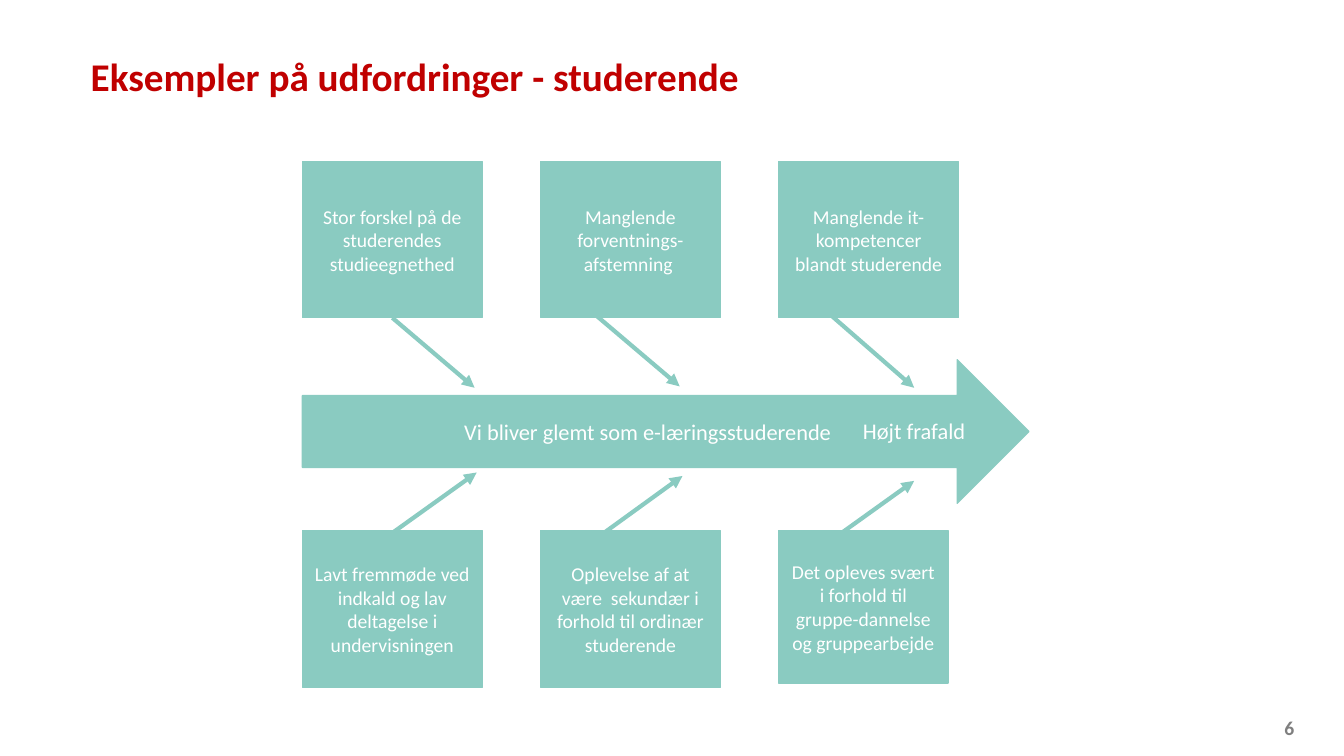
from pptx import Presentation
from pptx.dml.color import RGBColor
from pptx.enum.shapes import MSO_CONNECTOR as Conn, MSO_SHAPE as Shape
from pptx.enum.text import MSO_ANCHOR as Anchor, MSO_AUTO_SIZE as Auto, PP_ALIGN as Align
from pptx.oxml.ns import qn
from pptx.util import Pt
from lxml.etree import SubElement

# Content
TITLE = "Eksempler på udfordringer - studerende"
PAGE = "6"
# Each cause: text, box width, box height, arrow start, arrow end
UPPER = [
    ("Stor forskel på de studerendes studieegnethed", 128.5, 111.5,
     (279.5, 227), (339, 277)),
    ("Manglende forventnings-afstemning ", 128.5, 111.5,
     (422.5, 222.5), (485.5, 276)),
    ("Manglende it-kompetencer blandt studerende", 128.5, 111.5,
     (594.5, 226), (653, 277)),
]
LOWER = [
    ("Lavt fremmøde ved indkald og lav deltagelse i undervisningen", 128.5, 112,
     (277, 383), (340.5, 337.5)),
    ("Oplevelse af at være  sekundær i forhold til ordinær studerende", 128.5, 112,
     (424, 386), (487.5, 340)),
    ("Det opleves svært i forhold til gruppe-dannelse og gruppearbejde", 121, 109,
     (589.5, 389), (653, 343.5)),
]
ROWS = [(115.5, UPPER), (379, LOWER)]
SPINE = "Vi bliver glemt som e-læringsstuderende"
EFFECT = "Højt frafald"

# Style
FONT = "Calibri"
TEAL = RGBColor(0x8A, 0xCB, 0xC1)
RED = RGBColor(0xC0, 0x00, 0x00)
GREY = RGBColor(0x7F, 0x7F, 0x7F)
WHITE = RGBColor(0xFF, 0xFF, 0xFF)
LEFT, PITCH = 216, 170.1


def write(frame, text, size, color, align, anchor, inset=None, bold=False):
    frame.word_wrap = True
    frame.auto_size = Auto.NONE
    frame.vertical_anchor = anchor
    if inset is not None:
        frame.margin_left = frame.margin_right = Pt(inset)
        frame.margin_top = frame.margin_bottom = Pt(inset)
    frame.text = text
    para = frame.paragraphs[0]
    para.alignment = align
    font = para.font
    font.name, font.size, font.bold = FONT, Pt(size), bold
    font.color.rgb = color
    return para


def block(kind, x, y, w, h, text, size):
    shape = slide.shapes.add_shape(kind, Pt(x), Pt(y), Pt(w), Pt(h))
    shape.shadow.inherit = False
    shape.fill.solid()
    shape.fill.fore_color.rgb = TEAL
    shape.line.color.rgb = TEAL
    shape.line.width = Pt(1)
    write(shape.text_frame, text, size, WHITE, Align.CENTER, Anchor.MIDDLE)
    return shape


def arrow(start, end):
    line = slide.shapes.add_connector(Conn.STRAIGHT, *map(Pt, start + end))
    line.line.color.rgb = TEAL
    line.line.width = Pt(3)
    SubElement(line.line._get_or_add_ln(), qn("a:tailEnd"), type="triangle")
    SubElement(line._element.spPr, qn("a:effectLst"))
    return line


deck = Presentation()
deck.slide_width, deck.slide_height = Pt(960), Pt(540)
slide = deck.slides.add_slide(deck.slide_layouts[5])

# Title and page number
title = slide.shapes.title
title.left, title.top, title.width, title.height = map(Pt, (57.6, 20, 674, 73.5))
head = write(title.text_frame, TITLE, 28, RED, Align.LEFT, Anchor.MIDDLE, 7.2, True)
head.line_spacing = 0.88
page = slide.shapes.add_textbox(Pt(893.5), Pt(514), Pt(31), Pt(14.5))
write(page.text_frame, PAGE, 14, GREY, Align.RIGHT, Anchor.BOTTOM, 0, True)

# Causes with their arrows
for top, causes in ROWS:
    for col, (text, w, h, start, end) in enumerate(causes):
        x = LEFT + col * PITCH
        box = block(Shape.RECTANGLE, x, top, w, h, text, 14)
        link = arrow(start, end)
        # Join an arrow that leaves the middle of the lower side
        if abs(start[0] - x - w / 2) < 1 and abs(start[1] - top - h) < 1:
            link.begin_connect(box, 2)

# Spine and effect
block(Shape.RIGHT_ARROW, LEFT, 257, 519, 102.5, SPINE, 16)
block(Shape.RECTANGLE, 602, 291, 102, 33, EFFECT, 16)

deck.save("out.pptx")
